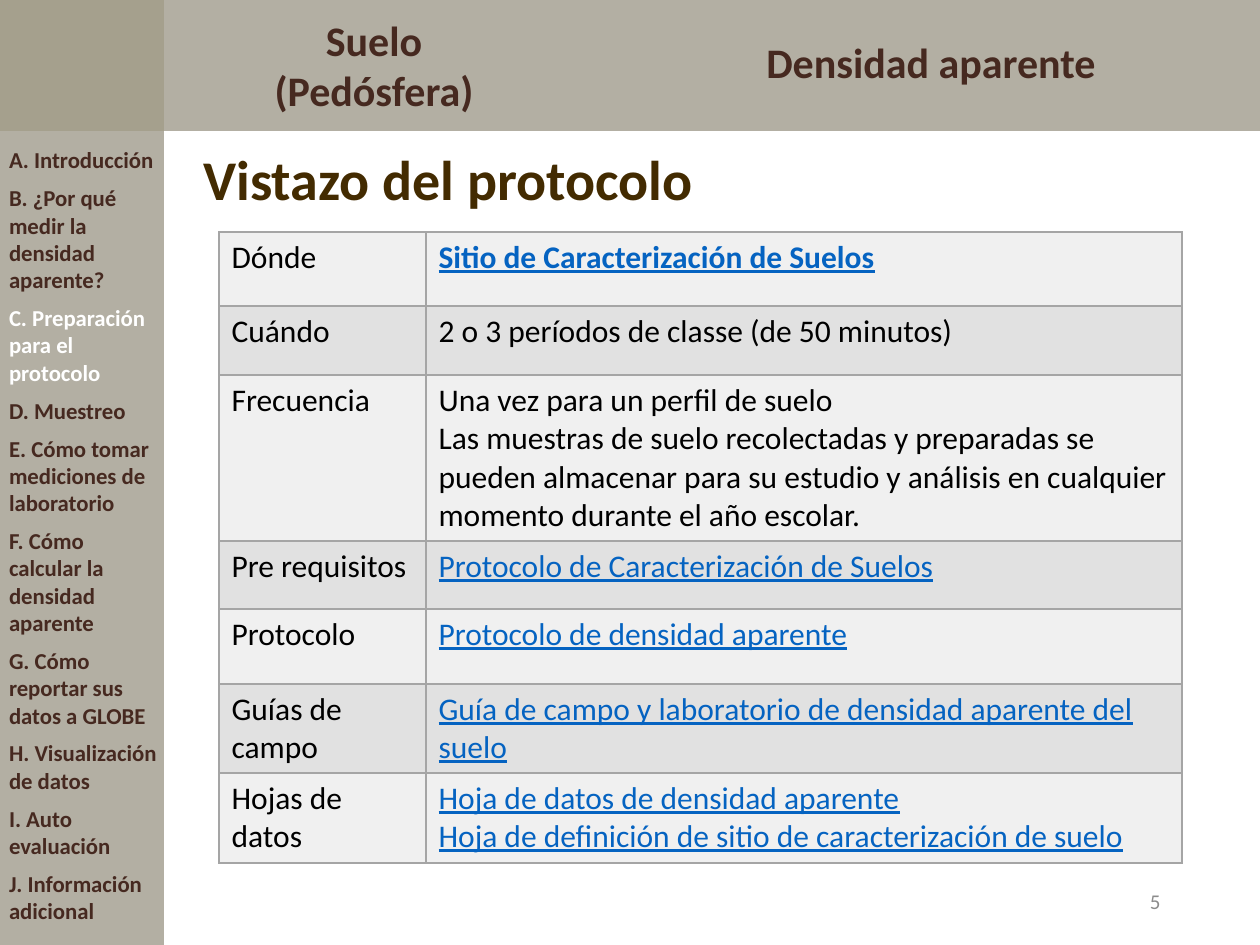
from dataclasses import dataclass

from lxml import etree
from pptx import Presentation
from pptx.dml.color import RGBColor
from pptx.enum import shapes, text
from pptx.oxml.ns import qn
from pptx.util import Emu, Pt

SCALE = 914400 / 126  # EMU per px
FONT = "Calibri"
SAND, DARK_SAND = "B3AFA3", "A5A08D"
BROWN, TITLE_BROWN, WHITE, BLACK = "462920", "432B01", "FFFFFF", "000000"
LINK, GREY, BORDER = "0563C1", "8C8C8C", "A5A5A5"
BANDS = ("F0F0F0", "E1E1E1")


@dataclass(frozen=True)
class Box:
    x: int
    y: int
    w: int
    h: int

    def emu(self) -> tuple:
        return tuple(px(v) for v in (self.x, self.y, self.w, self.h))


@dataclass(frozen=True)
class Style:
    size: int
    color: str
    bold: bool = False
    underline: bool = False


@dataclass(frozen=True)
class Row:
    height: int
    label: str
    lines: tuple
    link: bool = True
    bold: bool = False


def px(value: int) -> Emu:
    return Emu(round(value * SCALE))


def rgb(value: str) -> RGBColor:
    return RGBColor.from_string(value)


def add_run(p, content: str, style: Style) -> None:
    r = p.add_run()
    r.text = content
    r.font.name = FONT
    r.font.size = Pt(style.size)
    r.font.bold = style.bold
    r.font.underline = style.underline
    r.font.color.rgb = rgb(style.color)


def add_lines(tf, lines: tuple, style: Style) -> None:
    for i, line in enumerate(lines):
        p = tf.paragraphs[0] if i == 0 else tf.add_paragraph()
        add_run(p, line, style)


def add_rect(s, box: Box, color: str) -> None:
    sp = s.shapes.add_shape(shapes.MSO_SHAPE.RECTANGLE, *box.emu())
    sp.shadow.inherit = False
    sp.fill.solid()
    sp.fill.fore_color.rgb = rgb(color)
    sp.line.fill.background()


def add_text(s, box: Box, content: str, style: Style,
             align=text.PP_ALIGN.LEFT, anchor=text.MSO_ANCHOR.TOP):
    tf = s.shapes.add_textbox(*box.emu()).text_frame
    tf.word_wrap = True
    tf.vertical_anchor = anchor
    tf.paragraphs[0].alignment = align
    add_run(tf.paragraphs[0], content, style)
    return tf


def add_sidebar(s, box: Box, items: tuple, current: int) -> None:
    tf = s.shapes.add_textbox(*box.emu()).text_frame
    tf.word_wrap = True
    tf.margin_left = tf.margin_right = px(5)
    for i, item in enumerate(items):
        p = tf.paragraphs[0] if i == 0 else tf.add_paragraph()
        p.space_after = Pt(6)
        add_run(p, item, Style(13, WHITE if i == current else BROWN, bold=True))


def set_borders(cell, color: str) -> None:
    tc_pr = cell._tc.get_or_add_tcPr()
    for i, side in enumerate(("lnL", "lnR", "lnT", "lnB")):
        ln = etree.Element(qn(f"a:{side}"), w=str(Pt(1)))
        fill = etree.SubElement(ln, qn("a:solidFill"))
        etree.SubElement(fill, qn("a:srgbClr"), val=color)
        tc_pr.insert(i, ln)


def add_overview(s, x: int, y: int, widths: tuple, rows: tuple) -> None:
    box = Box(x, y, sum(widths), sum(row.height for row in rows))
    table = s.shapes.add_table(len(rows), len(widths), *box.emu()).table
    for column, width in zip(table.columns, widths):
        column.width = px(width)
    for i, row in enumerate(rows):
        table.rows[i].height = px(row.height)
        detail = Style(18, LINK if row.link else BLACK, row.bold, row.link)
        contents = (((row.label,), Style(18, BLACK)), (row.lines, detail))
        for j, (lines, style) in enumerate(contents):
            cell = table.cell(i, j)
            cell.fill.solid()
            cell.fill.fore_color.rgb = rgb(BANDS[i % 2])
            set_borders(cell, BORDER)
            add_lines(cell.text_frame, lines, style)


SECTIONS = (
    "A. Introducción",
    "B. ¿Por qué medir la densidad aparente?",
    "C. Preparación para el protocolo",
    "D. Muestreo",
    "E. Cómo tomar mediciones de laboratorio",
    "F. Cómo calcular la densidad aparente",
    "G. Cómo reportar sus datos a GLOBE",
    "H. Visualización de datos",
    "I. Auto evaluación",
    "J. Información adicional",
)
ROWS = (
    Row(74, "Dónde", ("Sitio de Caracterización de Suelos",), bold=True),
    Row(69, "Cuándo", ("2 o 3 períodos de classe (de 50 minutos)",), link=False),
    Row(166, "Frecuencia", (
        "Una vez para un perfil de suelo",
        "Las muestras de suelo recolectadas y preparadas se pueden almacenar "
        "para su estudio y análisis en cualquier momento durante el año escolar.",
    ), link=False),
    Row(68, "Pre requisitos", ("Protocolo de Caracterización de Suelos",)),
    Row(75, "Protocolo", ("Protocolo de densidad aparente",)),
    Row(89, "Guías de campo",
        ("Guía de campo y laboratorio de densidad aparente del suelo",)),
    Row(90, "Hojas de datos", (
        "Hoja de datos de densidad aparente",
        "Hoja de definición de sitio de caracterización de suelo",
    )),
)


def main() -> None:
    prs = Presentation()
    prs.slide_width, prs.slide_height = px(1260), px(945)
    s = prs.slides.add_slide(prs.slide_layouts[6])

    # Header band, sidebar and corner
    add_rect(s, Box(0, 0, 1260, 131), SAND)
    add_rect(s, Box(0, 0, 164, 945), SAND)
    add_rect(s, Box(0, 0, 164, 131), DARK_SAND)

    # Header texts
    heading = Style(24, BROWN, bold=True)
    center = text.PP_ALIGN.CENTER
    add_text(s, Box(251, 8, 246, 115), "Suelo (Pedósfera)", heading, center)
    add_text(s, Box(675, 30, 512, 63), "Densidad aparente", heading, center)

    # Title and page number
    middle = text.MSO_ANCHOR.MIDDLE
    title = add_text(s, Box(191, 91, 1086, 183), "Vistazo del protocolo",
                     Style(32, TITLE_BROWN, bold=True), anchor=middle)
    title.paragraphs[0].line_spacing = 0.9
    add_text(s, Box(890, 876, 283, 50), "5", Style(12, GREY),
             text.PP_ALIGN.RIGHT, middle)

    # Protocol table and section list
    add_overview(s, 219, 232, (207, 756), ROWS)
    add_sidebar(s, Box(4, 140, 160, 798), SECTIONS, current=2)

    prs.save("out.pptx")


if __name__ == "__main__":
    main()
